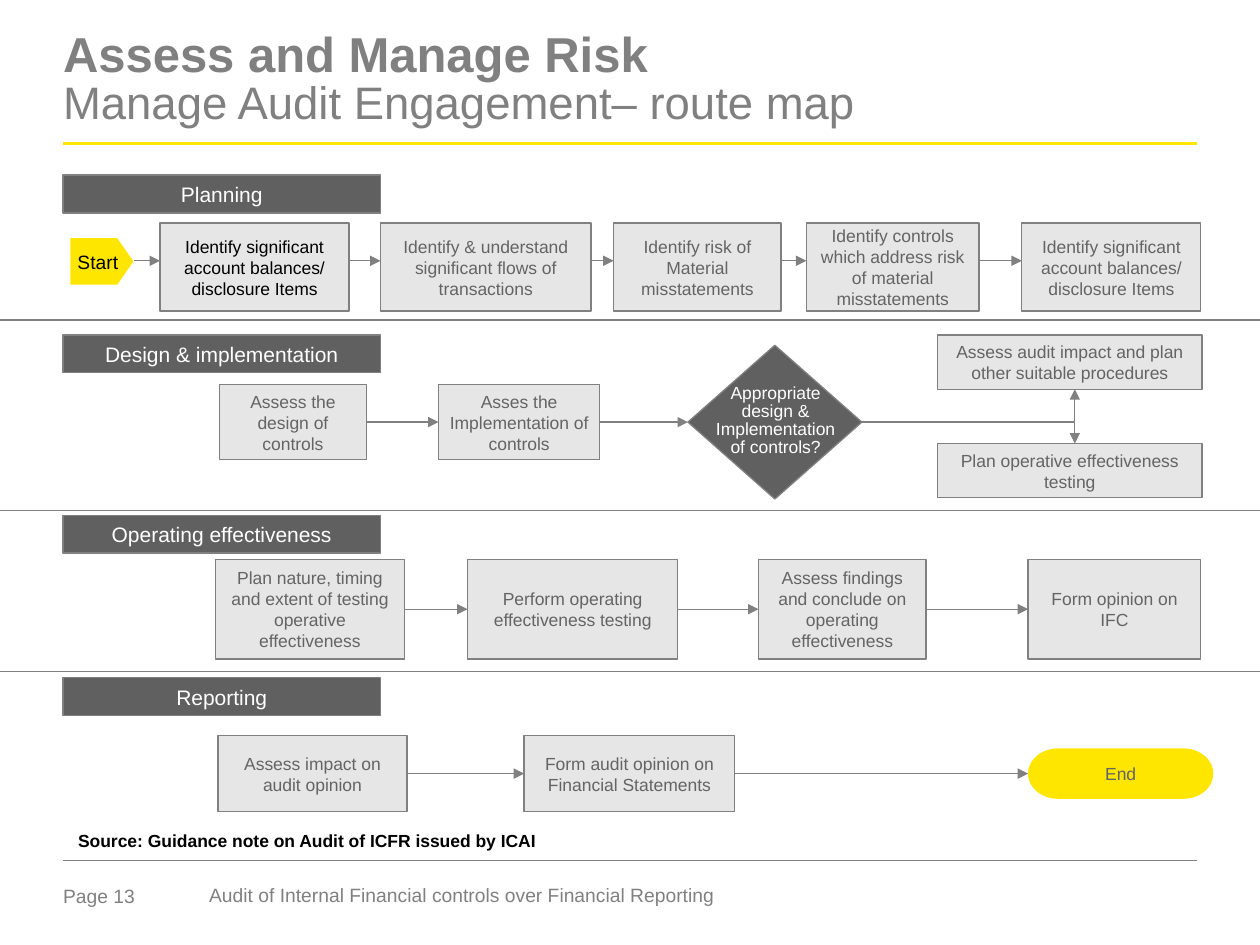
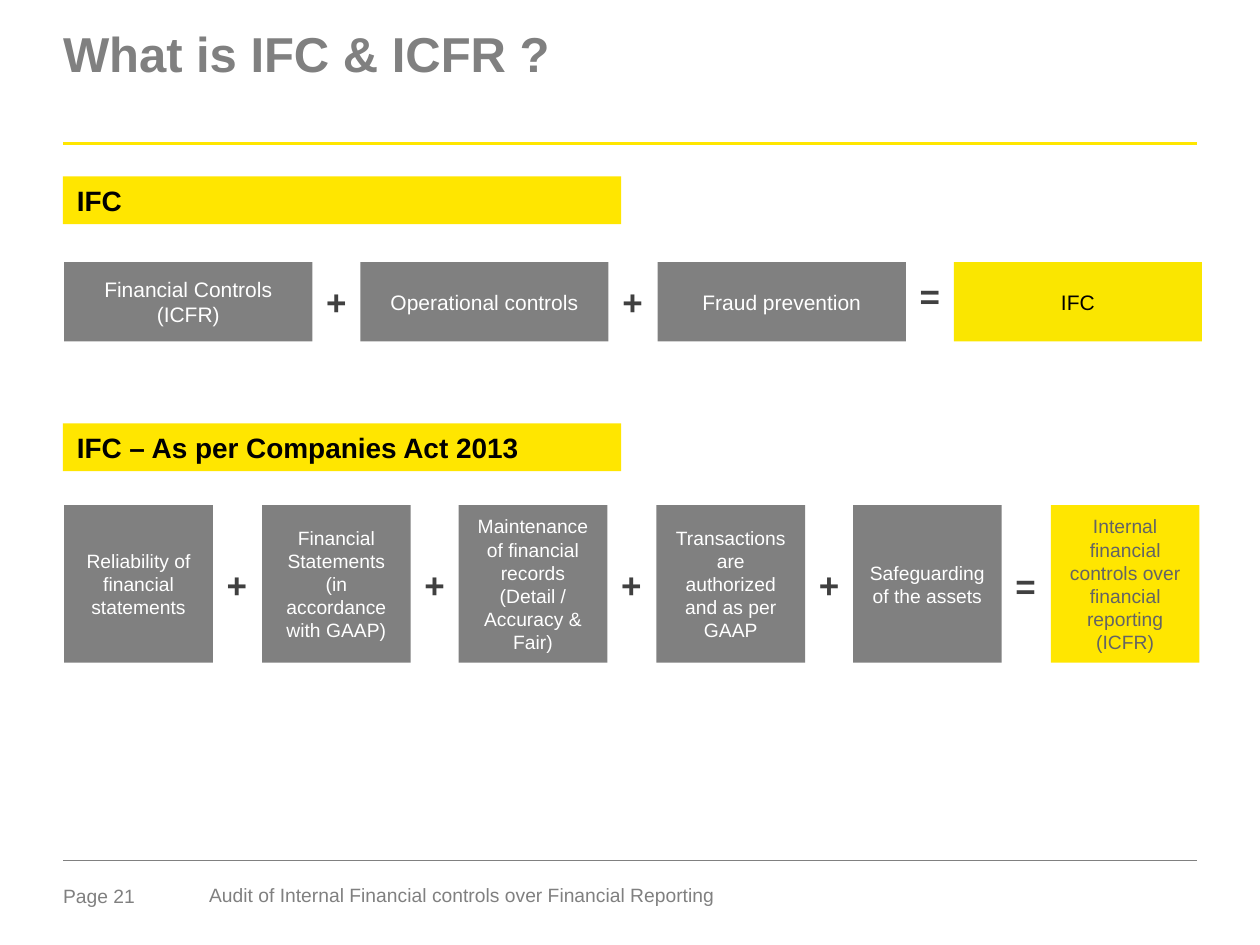
from lxml.etree import SubElement
from pptx import Presentation
from pptx.dml.color import RGBColor
from pptx.enum.shapes import MSO_CONNECTOR, MSO_SHAPE
from pptx.enum.text import MSO_ANCHOR, MSO_AUTO_SIZE, PP_ALIGN
from pptx.oxml.ns import qn
from pptx.util import Pt

EMU_PER_PX = 9144
FONT = "Arial"
YELLOW = RGBColor(0xFF, 0xE6, 0x00)
RESULT_YELLOW = RGBColor(0xFA, 0xE6, 0x00)
GREY = RGBColor(0x80, 0x80, 0x80)
CHARCOAL = RGBColor(0x60, 0x60, 0x60)
TEXT_GREY = RGBColor(0x64, 0x64, 0x64)
SIGN_GREY = RGBColor(0x40, 0x40, 0x40)
LIGHT_GREY = RGBColor(0xE6, 0xE6, 0xE6)
BLACK = RGBColor(0x00, 0x00, 0x00)
WHITE = RGBColor(0xFF, 0xFF, 0xFF)
NARROW = (9, 4, 9, 4)
WIDE = (11, 6, 11, 6)
LEFT, RIGHT = 1, 3


def px(length):
    return round(length * EMU_PER_PX)


class SlideBuilder:
    def __init__(self):
        self.deck = Presentation()
        self.deck.slide_width = px(1000)
        self.deck.slide_height = px(750)
        self.page = None

    def start_page(self, number, title, subtitle=None):
        self.page = self.deck.slides.add_slide(self.deck.slide_layouts[5])
        self.line((50, 114), (950, 114), YELLOW, 1.5)
        self.line((50, 683), (950, 683), GREY, 0.25)
        self.text((50, 702, 79, 22), f"Page {number}", 11, GREY, (0, 0, 0, 0))
        self.text((166, 700, 432, 20),
                  "Audit of Internal Financial controls over Financial Reporting",
                  11, GREY, (0, 4, 0, 0), spacing=0.85, after=6)
        self.title(title, subtitle)

    def title(self, title, subtitle):
        box = self.page.shapes.title
        box.left, box.top, box.width, box.height = map(px, (50, 26, 900, 94))
        self.frame(box, (0, 0, 0, 0), MSO_ANCHOR.TOP)
        para = box.text_frame.paragraphs[0]
        para.alignment = PP_ALIGN.LEFT
        para.line_spacing = 0.85
        self.span(para, title, 28, GREY, True)
        if subtitle:
            para.add_line_break()
            self.span(para, subtitle, 26, GREY, False)

    def frame(self, box, insets, anchor, wrap=True):
        frame = box.text_frame
        frame.auto_size = MSO_AUTO_SIZE.NONE
        frame.word_wrap = wrap
        frame.vertical_anchor = anchor
        (frame.margin_left, frame.margin_top,
         frame.margin_right, frame.margin_bottom) = map(px, insets)
        return frame

    def span(self, para, text, size, color, bold=False):
        span = para.add_run()
        span.text = text
        span.font.name = FONT
        span.font.size = Pt(size)
        span.font.bold = bold
        span.font.color.rgb = color

    def fill_text(self, box, text, size, color, insets, anchor, align,
                  bold=False, wrap=True, spacing=None, after=None):
        frame = self.frame(box, insets, anchor, wrap)
        for index, content in enumerate(text.split("\n")):
            para = frame.add_paragraph() if index else frame.paragraphs[0]
            para.alignment = align
            if spacing:
                para.line_spacing = spacing
            if after:
                para.space_after = Pt(after)
            for row, words in enumerate(content.split("\v")):
                if row:
                    para.add_line_break()
                self.span(para, words, size, color, bold)

    def text(self, place, text, size, color, insets=NARROW,
             anchor=MSO_ANCHOR.TOP, align=PP_ALIGN.LEFT, **style):
        box = self.page.shapes.add_textbox(*map(px, place))
        self.fill_text(box, text, size, color, insets, anchor, align, **style)

    def shape(self, place, fill, text="", size=10, color=TEXT_GREY,
              kind=MSO_SHAPE.RECTANGLE, outline=None, insets=NARROW,
              anchor=MSO_ANCHOR.MIDDLE, align=PP_ALIGN.CENTER, **style):
        box = self.page.shapes.add_shape(kind, *map(px, place))
        box.shadow.inherit = False
        box.fill.solid()
        box.fill.fore_color.rgb = fill
        if outline:
            box.line.color.rgb = outline
            box.line.width = Pt(0.75)
        else:
            box.line.fill.background()
        if text:
            self.fill_text(box, text, size, color, insets, anchor, align, **style)
        return box

    def step(self, place, text, color=TEXT_GREY):
        return self.shape(place, LIGHT_GREY, text, color=color, outline=GREY)

    def phase(self, top, text):
        self.shape((50, top, 252, 30), CHARCOAL, text, 12, WHITE, outline=GREY)

    def band(self, top, text):
        self.shape((50, top, 443, 38), YELLOW, text, 16, BLACK, insets=WIDE,
                   anchor=MSO_ANCHOR.TOP, align=PP_ALIGN.LEFT, bold=True)

    def line(self, start, end, color=GREY, width=0.75, arrow=False,
             kind=MSO_CONNECTOR.STRAIGHT):
        connector = self.page.shapes.add_connector(kind, *map(px, (*start, *end)))
        connector.line.color.rgb = color
        connector.line.width = Pt(width)
        properties = connector._element.spPr
        if arrow:
            SubElement(properties.find(qn("a:ln")), qn("a:tailEnd"), type="triangle")
        SubElement(properties, qn("a:effectLst"))
        return connector

    def elbow(self, start, end):
        connector = self.line(start, end, arrow=True, kind=MSO_CONNECTOR.ELBOW)
        connector._element.spPr.find(qn("a:prstGeom")).set("prst", "bentConnector2")

    def join(self, boxes):
        for source, target in zip(boxes, boxes[1:]):
            arrow = self.line((0, 0), (0, 0), arrow=True)
            arrow.begin_connect(source, RIGHT)
            arrow.end_connect(target, LEFT)

    def equation(self, top, width, height, pitch, size, terms, sign_tops,
                 result_fill, result_color):
        last = len(terms) - 1
        for index, term in enumerate(terms):
            left = 51 + round(index * pitch)
            fill, color = (result_fill, result_color) if index == last else (GREY, WHITE)
            self.shape((left, top, width, height), fill, term, size, color, insets=WIDE)
            if index < last:
                equals = index == last - 1
                middle = left + (width + pitch) / 2
                self.text((round(middle) - 39, sign_tops[equals], 78, 79),
                          "=" if equals else "+", 20, SIGN_GREY, WIDE,
                          align=PP_ALIGN.CENTER, bold=True)


def build_route_map(builder):
    builder.start_page(13, "Assess and Manage Risk",
                       "Manage Audit Engagement– route map")
    for top, name in ((139, "Planning"), (266, "Design & implementation"),
                      (409, "Operating effectiveness"), (538, "Reporting")):
        builder.phase(top, name)
    for divider in (254, 405, 533):
        builder.line((0, divider), (1000, divider))

    start = builder.shape((56, 189, 50, 37), YELLOW, "Start", 11, BLACK,
                          MSO_SHAPE.PENTAGON, wrap=False)
    start.adjustments[0] = 0.35
    planning = (
        (127, 150, "Identify significant\naccount balances/\ndisclosure Items", BLACK),
        (302, 167, "Identify & understand significant flows of transactions", TEXT_GREY),
        (487, 133, "Identify risk of Material misstatements", TEXT_GREY),
        (640, 137, "Identify controls which address risk of material misstatements",
         TEXT_GREY),
        (811, 142, "Identify significant account balances/ disclosure Items", TEXT_GREY),
    )
    previous_right = 106
    for left, width, text, color in planning:
        builder.step((left, 177, width, 70), text, color)
        builder.line((previous_right, 207), (left, 207), arrow=True)
        previous_right = left + width

    design = [builder.step((174, 305, 117, 60), "Assess the design of controls"),
              builder.step((348, 305, 128, 60), "Asses the Implementation of controls"),
              builder.shape((546, 274, 138, 122), CHARCOAL,
                            kind=MSO_SHAPE.FLOWCHART_DECISION, outline=GREY)]
    builder.text((560, 302, 111, 61),
                 "Appropriate design & Implementation\vof controls?", 10, WHITE,
                 (0, 3, 0, 0), MSO_ANCHOR.MIDDLE, PP_ALIGN.CENTER,
                 spacing=0.85, after=5.2)
    builder.join(design)
    builder.step((744, 266, 210, 43),
                 "Assess audit impact and plan other suitable procedures")
    builder.step((744, 352, 210, 43), "Plan operative effectiveness testing")
    for branch_end in (309, 352):
        builder.elbow((684, 335), (853, branch_end))

    operating = (
        (171, 150, "Plan nature, timing\nand extent of testing operative\neffectiveness"),
        (371, 167, "Perform operating effectiveness testing"),
        (602, 133, "Assess findings and conclude on operating effectiveness"),
        (816, 137, "Form opinion on IFC"),
    )
    builder.join([builder.step((left, 444, width, 79), text)
                  for left, width, text in operating])

    builder.join([
        builder.step((173, 584, 150, 60), "Assess impact on audit opinion"),
        builder.step((416, 584, 167, 60), "Form audit opinion on Financial Statements"),
        builder.shape((816, 594, 147, 40), YELLOW, "End",
                      kind=MSO_SHAPE.FLOWCHART_TERMINATOR),
    ])
    builder.text((53, 655, 636, 26),
                 "Source: Guidance note on Audit of ICFR issued by ICAI",
                 10, BLACK, bold=True)


def build_definitions(builder):
    builder.start_page(21, "What is IFC & ICFR ?")
    builder.band(140, "IFC")
    builder.equation(208, 197, 63, 235.33, 12,
                     ("Financial Controls\n(ICFR)", "Operational controls",
                      "Fraud prevention", "IFC"),
                     (217, 212), RESULT_YELLOW, BLACK)
    builder.band(336, "IFC – As per Companies Act 2013")
    builder.equation(401, 118, 125, 156.6, 11,
                     ("Reliability of financial statements",
                      "Financial Statements\n(in accordance with GAAP)",
                      "Maintenance of financial records (Detail / Accuracy & Fair)",
                      "Transactions are authorized and as per GAAP",
                      "Safeguarding of the assets",
                      "Internal financial controls over financial reporting\n(ICFR)"),
                     (441, 442), YELLOW, TEXT_GREY)


def main():
    builder = SlideBuilder()
    build_route_map(builder)
    build_definitions(builder)
    builder.deck.save("out.pptx")


if __name__ == "__main__":
    main()
